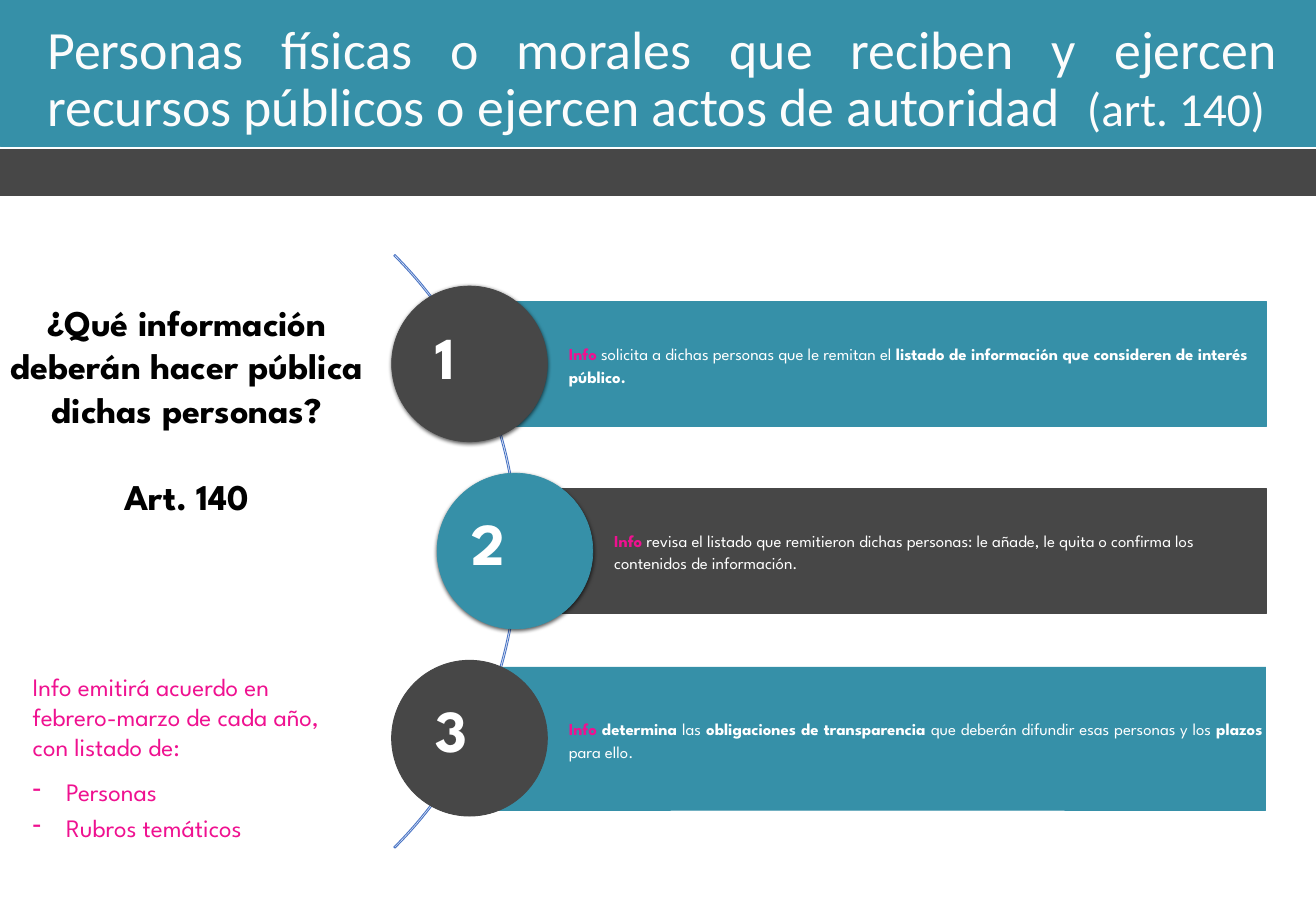
from lxml import etree
from pptx import Presentation, util as u
from pptx.dml.color import RGBColor
from pptx.enum import shapes, text
from pptx.oxml import parse_xml
from pptx.oxml.ns import nsdecls, qn

TEAL = RGBColor(0x36, 0x90, 0xA8)
GREY = RGBColor(0x47, 0x47, 0x47)
BLUE = RGBColor(0x4A, 0x75, 0xC5)
PINK = RGBColor(0xEF, 0x11, 0x90)
OFF_WHITE = RGBColor(0xFC, 0xFC, 0xFC)
WHITE = RGBColor(0xFF, 0xFF, 0xFF)
BLACK = RGBColor(0, 0, 0)

EMU_PER_PX = 9144  # 100 px to the inch
BOX_INSETS = (16, 8, 16, 8)
BAR_INSETS = (148, 5, 5, 5)


def px(length):
    return u.Emu(length * EMU_PER_PX)


class SlideBuilder:
    font = "League Spartan"

    def __init__(self, slide):
        self.slide = slide

    def shape(self, kind, box, fill, line, width):
        """Add a preset shape; a fill of None means no fill."""
        shape = self.slide.shapes.add_shape(kind, *map(px, box))
        shape.shadow.inherit = False
        if fill is None:
            shape.fill.background()
        else:
            shape.fill.solid()
            shape.fill.fore_color.rgb = fill
        shape.line.color.rgb = line
        shape.line.width = u.Pt(width)
        return shape

    def soft_shadow(self, shape):
        effects = shape._element.spPr.find(qn("a:effectLst"))
        effects.append(parse_xml(
            f'<a:outerShdw {nsdecls("a")} blurRad="57150" dist="19050" dir="5400000" '
            'algn="ctr" rotWithShape="0"><a:srgbClr val="000000">'
            '<a:alpha val="63000"/></a:srgbClr></a:outerShdw>'))

    def frame(self, shape, insets, anchor):
        frame = shape.text_frame
        frame.word_wrap = True
        frame.auto_size = text.MSO_AUTO_SIZE.NONE
        frame.vertical_anchor = anchor
        (frame.margin_left, frame.margin_top,
         frame.margin_right, frame.margin_bottom) = map(px, insets)
        return frame

    def text_box(self, box):
        shape = self.slide.shapes.add_textbox(*map(px, box))
        return self.frame(shape, BOX_INSETS, text.MSO_ANCHOR.TOP)

    def add_runs(self, paragraph, runs, align=text.PP_ALIGN.LEFT, spacing=None, font=None):
        """Fill a paragraph with runs given as (words, size, colour, bold)."""
        paragraph.alignment = align
        if spacing:
            paragraph.line_spacing = u.Pt(spacing)
        for words, size, colour, bold in runs:
            run = paragraph.add_run()
            run.text = words
            run.font.name = font or self.font
            run.font.size = u.Pt(size)
            run.font.color.rgb = colour
            run.font.bold = bold

    def title(self, box, runs, spacing):
        title = self.slide.shapes.title
        self.slide.shapes._spTree.append(title._element)  # in front of the bands
        title.left, title.top, title.width, title.height = map(px, box)
        frame = self.frame(title, BOX_INSETS, text.MSO_ANCHOR.MIDDLE)
        self.add_runs(frame.paragraphs[0], runs, text.PP_ALIGN.JUSTIFY, spacing, "Calibri")

    def dash(self, paragraph):
        properties = paragraph._p.get_or_add_pPr()
        properties.set("marL", str(px(50)))
        properties.set("indent", str(-px(50)))
        etree.SubElement(properties, qn("a:buChar")).set("char", "-")

    def step_bar(self, box, fill, width, runs, align, spacing):
        bar = self.shape(shapes.MSO_SHAPE.RECTANGLE, box, fill, fill, width)
        frame = self.frame(bar, BAR_INSETS, text.MSO_ANCHOR.MIDDLE)
        sized = [(words, 18, colour, bold) for words, colour, bold in runs]
        self.add_runs(frame.paragraphs[0], sized, align, spacing)

    def step_circle(self, left, top, fill, width, shadow):
        circle = self.shape(shapes.MSO_SHAPE.OVAL, (left, top, 233, 233), fill, fill, width)
        if shadow:
            self.soft_shadow(circle)


LEFT, JUSTIFY = text.PP_ALIGN.LEFT, text.PP_ALIGN.JUSTIFY
BAR_RIGHT = 1894
CIRCLE_TOP, STEP_PITCH = 428, 280

# circle left, bar top, bar height, bar colour, circle colour, bar line, circle line,
# circle shadow, number left, number top, alignment, line spacing, runs
STEPS = [
    (586, 451, 187, TEAL, GREY, 0.5, 0.75, True, 636, 471, LEFT, 24.2, [
        ("Info", PINK, True),
        (" solicita a dichas personas que le remitan el ", WHITE, False),
        ("listado de información que consideren de interés público.", WHITE, True)]),
    (654, 731, 187, GREY, TEAL, 0.5, 0.75, True, 689, 749, LEFT, 23.6, [
        ("Info", PINK, True),
        (" revisa el listado que remitieron dichas personas: le añade, le quita "
         "o confirma los contenidos de información.", WHITE, False)]),
    (586, 998, 214, TEAL, GREY, 1, 1, False, 636, 1029, JUSTIFY, 24.6, [
        ("Info ", PINK, True),
        ("determina ", WHITE, True),
        ("las", WHITE, False),
        (" obligaciones de transparencia ", WHITE, True),
        ("que deberán difundir esas personas y los ", WHITE, False),
        ("plazos", WHITE, True),
        (" para ello.", WHITE, False)]),
]


def main():
    presentation = Presentation()
    presentation.slide_width, presentation.slide_height = px(1969), px(1378)
    slide = presentation.slides.add_slide(presentation.slide_layouts[5])
    builder = SlideBuilder(slide)

    for top, height, colour in ((0, 219, TEAL), (224, 69, GREY)):
        builder.shape(shapes.MSO_SHAPE.RECTANGLE, (0, top, 1969, height), colour, colour, 1)
    builder.title((55, 23, 1872, 194), [
        ("Personas físicas o morales que reciben y ejercen recursos públicos "
         "o ejercen actos de autoridad", 58, OFF_WHITE, False),
        ("  ", 64, OFF_WHITE, False),
        ("(art. 140)", 51, OFF_WHITE, False)], 62.6)

    arc = builder.shape(shapes.MSO_SHAPE.BLOCK_ARC, (-481, 197, 1256, 1256), None, BLUE, 1)
    for index, value in enumerate((189, 27, 0.002)):
        arc.adjustments[index] = value

    for index, (circle_left, bar_top, bar_height, bar_fill, circle_fill, bar_line,
                circle_line, shadow, _, _, align, spacing, runs) in enumerate(STEPS):
        bar_left = circle_left + 117
        bar = (bar_left, bar_top, BAR_RIGHT - bar_left, bar_height)
        builder.step_bar(bar, bar_fill, bar_line, runs, align, spacing)
        builder.step_circle(circle_left, CIRCLE_TOP + index * STEP_PITCH,
                            circle_fill, circle_line, shadow)

    question = builder.text_box((-8, 441, 575, 410))
    builder.add_runs(question.paragraphs[0], [
        ("¿Qué información deberán hacer pública dichas personas?", 39, BLACK, True)],
        text.PP_ALIGN.CENTER)
    article = question.add_paragraph()
    article.space_before = u.Pt(47)
    builder.add_runs(article, [("Art. 140", 39, BLACK, True)], text.PP_ALIGN.CENTER)

    agreement = builder.text_box((33, 997, 503, 276))
    intro = agreement.paragraphs[0]
    intro.space_after = u.Pt(9.6)
    builder.add_runs(intro, [
        ("Info emitirá acuerdo en febrero-marzo de cada año, con listado de:",
         27, PINK, False)])
    for item in ("Personas", "Rubros temáticos"):
        paragraph = agreement.add_paragraph()
        builder.add_runs(paragraph, [(item, 27, PINK, False)], spacing=38.6)
        builder.dash(paragraph)

    for number, step in enumerate(STEPS, 1):
        left, top = step[8:10]
        frame = builder.text_box((left, top, 70, 124))
        builder.add_runs(frame.paragraphs[0], [(str(number), 64, WHITE, True)])

    presentation.save("out.pptx")


if __name__ == "__main__":
    main()
